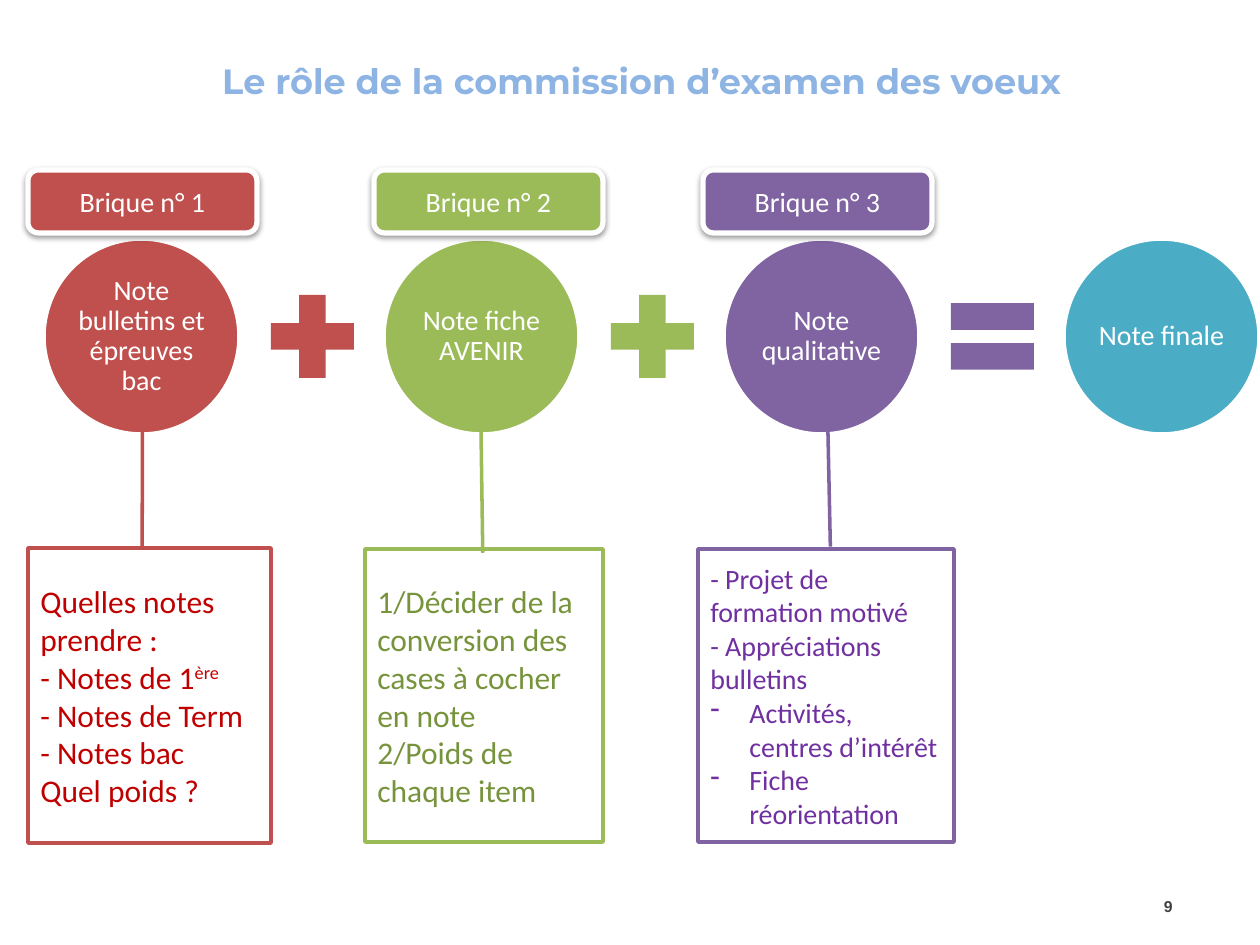
from lxml import etree
from pptx import Presentation
from pptx.dml.color import RGBColor
from pptx.enum.shapes import MSO_SHAPE
from pptx.enum.text import MSO_ANCHOR, PP_ALIGN
from pptx.oxml.ns import qn
from pptx.util import Emu, Pt

CIRCLE, ROUNDED = MSO_SHAPE.OVAL, MSO_SHAPE.ROUNDED_RECTANGLE
PLUS, EQUAL = MSO_SHAPE.MATH_PLUS, MSO_SHAPE.MATH_EQUAL
CALLOUT = MSO_SHAPE.LINE_CALLOUT_1
MIDDLE = MSO_ANCHOR.MIDDLE
LEFT, CENTER, RIGHT = PP_ALIGN.LEFT, PP_ALIGN.CENTER, PP_ALIGN.RIGHT
PX = 914400 / 126

THEME = {
    "title": "8EB4E3", "white": "FFFFFF", "number": "404040",
    "red": "C0504D", "green": "9BBB59", "purple": "8064A2", "blue": "4BACC6",
    "red_text": "C00000", "green_text": "77933C", "purple_text": "7030A0",
    "title_size": 20, "label_size": 16, "detail_size": 18, "number_size": 9,
    "title_font": "Montserrat", "body_font": "Calibri", "number_font": "Arial",
}

BRICKS = [
    {"color": "red", "note": "Note bulletins et épreuves bac", "operator": PLUS,
     "label_left": 28, "detail_box": (28, 548, 243, 295),
     "leader": (-0.005, 0.47, -0.418, 0.471), "detail_size": "detail_size",
     "details": ["Quelles notes prendre :", "- Notes de 1", "- Notes de Term",
                 "- Notes bac", "Quel poids ?"], "bullets": []},
    {"color": "green", "note": "Note fiche AVENIR", "operator": PLUS,
     "label_left": 374, "detail_box": (365, 549, 238, 293),
     "leader": (0.013, 0.495, -0.545, 0.485), "detail_size": "detail_size",
     "details": ["1/Décider de la conversion des cases à cocher en note",
                 "2/Poids de chaque item"], "bullets": []},
    {"color": "purple", "note": "Note qualitative", "operator": EQUAL,
     "label_left": 703, "detail_box": (698, 549, 256, 293),
     "leader": (-0.008, 0.517, -0.546, 0.504), "detail_size": "label_size",
     "details": ["- Projet de formation motivé", "- Appréciations bulletins"],
     "bullets": ["Activités, centres d’intérêt", "Fiche réorientation"]},
]


def add_block(kind, box, fill, line=None, width=0):
    block = slide.shapes.add_shape(kind, *[Emu(round(v * PX)) for v in box])
    block.shadow.inherit = False
    block.fill.solid()
    block.fill.fore_color.rgb = RGBColor.from_string(THEME[fill])
    if line:
        block.line.color.rgb = RGBColor.from_string(THEME[line])
        block.line.width = Pt(width)
    else:
        block.line.fill.background()
    return block


def write(holder, text, size, color, font="body_font", align=CENTER, bold=False):
    frame = holder.text_frame
    frame.text = text
    frame.word_wrap = True
    frame.vertical_anchor = MIDDLE
    for paragraph in frame.paragraphs:
        paragraph.alignment = align
        for run in paragraph.runs:
            run.font.size = Pt(THEME[size])
            run.font.name = THEME[font]
            run.font.bold = bold
            run.font.color.rgb = RGBColor.from_string(THEME[color])
    return frame


prs = Presentation()
prs.slide_width, prs.slide_height = Emu(round(1260 * PX)), Emu(round(945 * PX))
slide = prs.slides.add_slide(prs.slide_layouts[5])

title = slide.shapes.title
title.left, title.top, title.width, title.height = [
    Emu(round(v * PX)) for v in (99, -9, 1086, 178)]
write(title, "Le rôle de la commission d’examen des voeux",
      "title_size", "title", "title_font", bold=True)

page_number = slide.shapes.add_textbox(
    *[Emu(round(v * PX)) for v in (1123, 881, 62, 50)])
write(page_number, "9", "number_size", "number", "number_font", RIGHT, True)

notes = [(brick["note"], brick["color"]) for brick in BRICKS] + [("Note finale", "blue")]
for index, (note, color) in enumerate(notes):
    circle = add_block(CIRCLE, (44 + 340 * index, 239, 195, 195), color, "white", 2)
    circle_text = write(circle, note, "label_size", "white")
    circle_text.paragraphs[0].line_spacing = 0.9
    circle_text.margin_left = circle_text.margin_right = Emu(round(3 * PX))
    circle_text.margin_top = circle_text.margin_bottom = Emu(round(3 * PX))

for index, brick in enumerate(BRICKS):
    color = brick["color"]
    add_block(brick["operator"], (256 + 340 * index, 280, 113, 113), color)

    detail = add_block(CALLOUT, brick["detail_box"], "white", color, 2)
    for position, value in enumerate(brick["leader"]):
        detail.adjustments[position] = value
    detail_text = write(detail, "\n".join(brick["details"] + brick["bullets"]),
                        brick["detail_size"], color + "_text", align=LEFT)
    for paragraph in detail_text.paragraphs:
        if paragraph.text in brick["bullets"]:
            properties = paragraph._p.get_or_add_pPr()
            properties.set("marL", str(round(39 * PX)))
            properties.set("indent", str(round(-39 * PX)))
            etree.SubElement(properties, qn("a:buChar"), char="-")
        if paragraph.text == "- Notes de 1":
            ordinal = paragraph.add_run()
            ordinal.text = "ère"
            ordinal.font.size = Pt(THEME["detail_size"])
            ordinal.font.name = THEME["body_font"]
            ordinal.font.color.rgb = RGBColor.from_string(THEME["red_text"])
            ordinal.font._element.set("baseline", "30000")

    label = add_block(ROUNDED, (brick["label_left"], 170, 229, 63), color, "white", 3)
    write(label, f"Brique n° {index + 1}", "label_size", "white")
    effects = label._element.spPr.find(qn("a:effectLst"))
    shadow = etree.SubElement(effects, qn("a:outerShdw"), blurRad="40000",
                              dist="20000", dir="5400000", rotWithShape="0")
    shade = etree.SubElement(shadow, qn("a:srgbClr"), val="000000")
    etree.SubElement(shade, qn("a:alpha"), val="38000")

prs.save("out.pptx")
